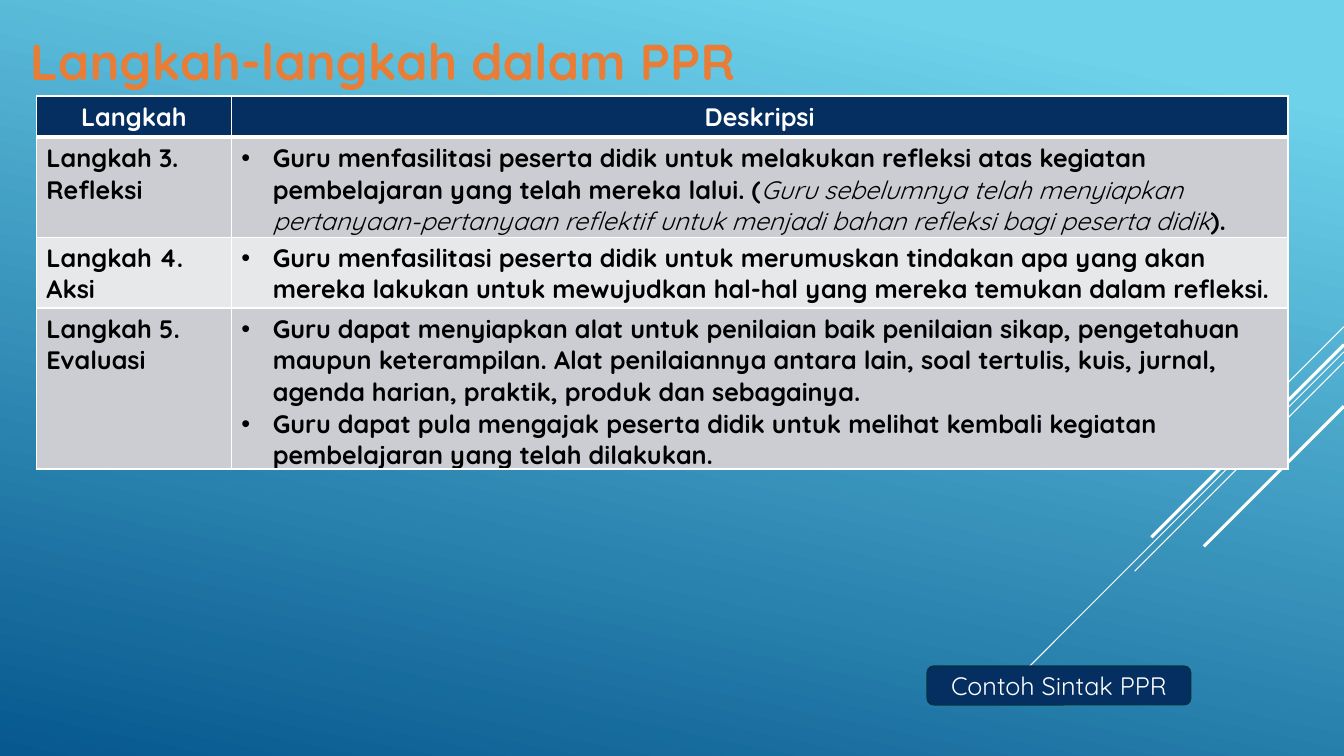
from dataclasses import dataclass

from lxml.etree import SubElement
from pptx import Presentation
from pptx.dml.color import RGBColor
from pptx.enum.shapes import MSO_CONNECTOR, MSO_SHAPE
from pptx.enum.text import MSO_ANCHOR, MSO_AUTO_SIZE, PP_ALIGN
from pptx.oxml import parse_xml
from pptx.oxml.ns import nsdecls, qn
from pptx.slide import Slide
from pptx.table import _Cell
from pptx.text.text import _Paragraph, _Run
from pptx.util import Pt


@dataclass(frozen=True)
class Theme:
    font: str = "Quicksand"
    sky: str = "6ED2EB"
    deep: str = "06588E"
    navy: str = "052F61"
    edge: str = "043148"
    orange: str = "E87D37"
    white: str = "FFFFFF"
    black: str = "000000"
    bands: tuple[str, str] = ("CCCDD2", "E7E8EA")
    head: float = 36
    text: float = 18


@dataclass(frozen=True)
class Ray:
    top: float
    reach: float
    weight: float


@dataclass(frozen=True)
class Step:
    name: str
    points: tuple[tuple[str, ...], ...]
    height: float


THEME = Theme()
WIDTH, HEIGHT = 960, 540
INDENT = 22.5

RAYS = (
    Ray(233.3, 72, 0.75),
    Ray(251.3, 234.7, 0.75),
    Ray(258.5, 149.5, 0.75),
    Ray(246.2, 137.6, 2.25),
    Ray(290.2, 100.1, 2.25),
)

STEPS = (
    Step("Langkah 3. Refleksi", ((
        "Guru menfasilitasi peserta didik untuk melakukan refleksi atas kegiatan "
        "pembelajaran yang telah mereka lalui. (",
        "Guru sebelumnya telah menyiapkan pertanyaan-pertanyaan reflektif untuk "
        "menjadi bahan refleksi bagi peserta didik",
        ").",
    ),), 71.3),
    Step("Langkah 4. Aksi", ((
        "Guru menfasilitasi peserta didik untuk merumuskan tindakan apa yang akan "
        "mereka lakukan untuk mewujudkan hal-hal yang mereka temukan dalam refleksi.",
    ),), 50.7),
    Step("Langkah 5.\nEvaluasi", (
        ("Guru dapat menyiapkan alat untuk penilaian baik penilaian sikap, pengetahuan "
         "maupun keterampilan. Alat penilaiannya antara lain, soal tertulis, kuis, "
         "jurnal, agenda harian, praktik, produk dan sebagainya.",),
        ("Guru dapat pula mengajak peserta didik untuk melihat kembali kegiatan "
         "pembelajaran yang telah dilakukan.",),
    ), 115),
)


def rgb(code: str) -> RGBColor:
    return RGBColor.from_string(code)


def style(run: _Run, size: float, color: str, bold: bool, slant: bool = False) -> None:
    font = run.font
    font.name, font.size = THEME.font, Pt(size)
    font.bold, font.italic = bold, slant
    font.color.rgb = rgb(color)


def paint(slide: Slide) -> None:
    fill = slide.background.fill
    fill.gradient()
    fill.gradient_angle = 258
    stops = zip(fill.gradient_stops, ((0.1, THEME.sky), (1, THEME.deep)))
    for stop, (place, color) in stops:
        stop.position = place
        stop.color.rgb = rgb(color)


def draw_ray(slide: Slide, ray: Ray) -> None:
    line = slide.shapes.add_connector(
        MSO_CONNECTOR.STRAIGHT, Pt(WIDTH), Pt(ray.top),
        Pt(WIDTH - ray.reach), Pt(ray.top + ray.reach))
    line.line.color.rgb = rgb(THEME.white)
    line.line.width = Pt(ray.weight)
    SubElement(line._element.spPr, qn("a:effectLst"))


def draw_title(slide: Slide) -> None:
    title = slide.shapes.title
    title.left, title.top, title.width, title.height = Pt(10.8), Pt(18), Pt(525), Pt(51)
    frame = title.text_frame
    frame.text = "Langkah-langkah dalam PPR"
    frame.word_wrap = False
    frame.auto_size = MSO_AUTO_SIZE.SHAPE_TO_FIT_TEXT
    frame.vertical_anchor = MSO_ANCHOR.TOP
    para = frame.paragraphs[0]
    para.alignment = PP_ALIGN.CENTER
    para.line_spacing = 1.0
    style(para.runs[0], THEME.head, THEME.orange, True)


def dress(cell: _Cell, fill: str, top: float = 1, base: float = 1) -> None:
    cell.fill.solid()
    cell.fill.fore_color.rgb = rgb(fill)
    cell.margin_bottom = Pt(0)
    sides = (("L", 1), ("R", 1), ("T", top), ("B", base))
    for spot, (side, weight) in enumerate(sides):
        cell._tc.tcPr.insert(spot, parse_xml(
            f'<a:ln{side} {nsdecls("a")} w="{Pt(weight)}"><a:solidFill>'
            f'<a:srgbClr val="{THEME.white}"/></a:solidFill></a:ln{side}>'))


def write(cell: _Cell, text: str, color: str, align: PP_ALIGN) -> None:
    cell.text_frame.text = text
    for para in cell.text_frame.paragraphs:
        para.alignment = align
        style(para.runs[0], THEME.text, color, True)


def bullet(para: _Paragraph, parts: tuple[str, ...]) -> None:
    props = para._p.get_or_add_pPr()
    props.set("marL", str(Pt(INDENT)))
    props.set("indent", str(Pt(-INDENT)))
    SubElement(props, qn("a:buFont"), typeface="Arial")
    SubElement(props, qn("a:buChar"), char="•")
    for spot, part in enumerate(parts):
        run = para.add_run()
        run.text = part
        slant = spot % 2 == 1
        style(run, THEME.text, THEME.black, not slant, slant)


def draw_table(slide: Slide) -> None:
    table = slide.shapes.add_table(
        len(STEPS) + 1, 2, Pt(26), Pt(68.6), Pt(894), Pt(266.5)).table
    table.columns[0].width, table.columns[1].width = Pt(139.2), Pt(754.8)
    table.rows[0].height = Pt(29.5)
    for col, label in enumerate(("Langkah", "Deskripsi")):
        cell = table.cell(0, col)
        dress(cell, THEME.navy, base=3)
        write(cell, label, THEME.white, PP_ALIGN.CENTER)
    for row, step in enumerate(STEPS, 1):
        table.rows[row].height = Pt(step.height)
        name, detail = table.cell(row, 0), table.cell(row, 1)
        for cell in (name, detail):
            dress(cell, THEME.bands[(row - 1) % 2], top=3 if row == 1 else 1)
        write(name, step.name, THEME.black, PP_ALIGN.LEFT)
        frame = detail.text_frame
        for spot, parts in enumerate(step.points):
            bullet(frame.add_paragraph() if spot else frame.paragraphs[0], parts)


def draw_button(slide: Slide) -> None:
    button = slide.shapes.add_shape(
        MSO_SHAPE.ROUNDED_RECTANGLE, Pt(662.4), Pt(475.9), Pt(188), Pt(27.4))
    button.shadow.inherit = False
    button.fill.solid()
    button.fill.fore_color.rgb = rgb(THEME.navy)
    button.line.color.rgb = rgb(THEME.edge)
    button.line.width = Pt(1.25)
    frame = button.text_frame
    frame.text = "Contoh Sintak PPR"
    frame.vertical_anchor = MSO_ANCHOR.MIDDLE
    frame.paragraphs[0].alignment = PP_ALIGN.CENTER
    style(frame.paragraphs[0].runs[0], THEME.text, THEME.white, False)


def main() -> None:
    deck = Presentation()
    deck.slide_width, deck.slide_height = Pt(WIDTH), Pt(HEIGHT)
    slide = deck.slides.add_slide(deck.slide_layouts[5])
    paint(slide)
    for ray in RAYS:
        draw_ray(slide, ray)
    draw_title(slide)
    draw_table(slide)
    draw_button(slide)
    deck.save("out.pptx")


if __name__ == "__main__":
    main()
